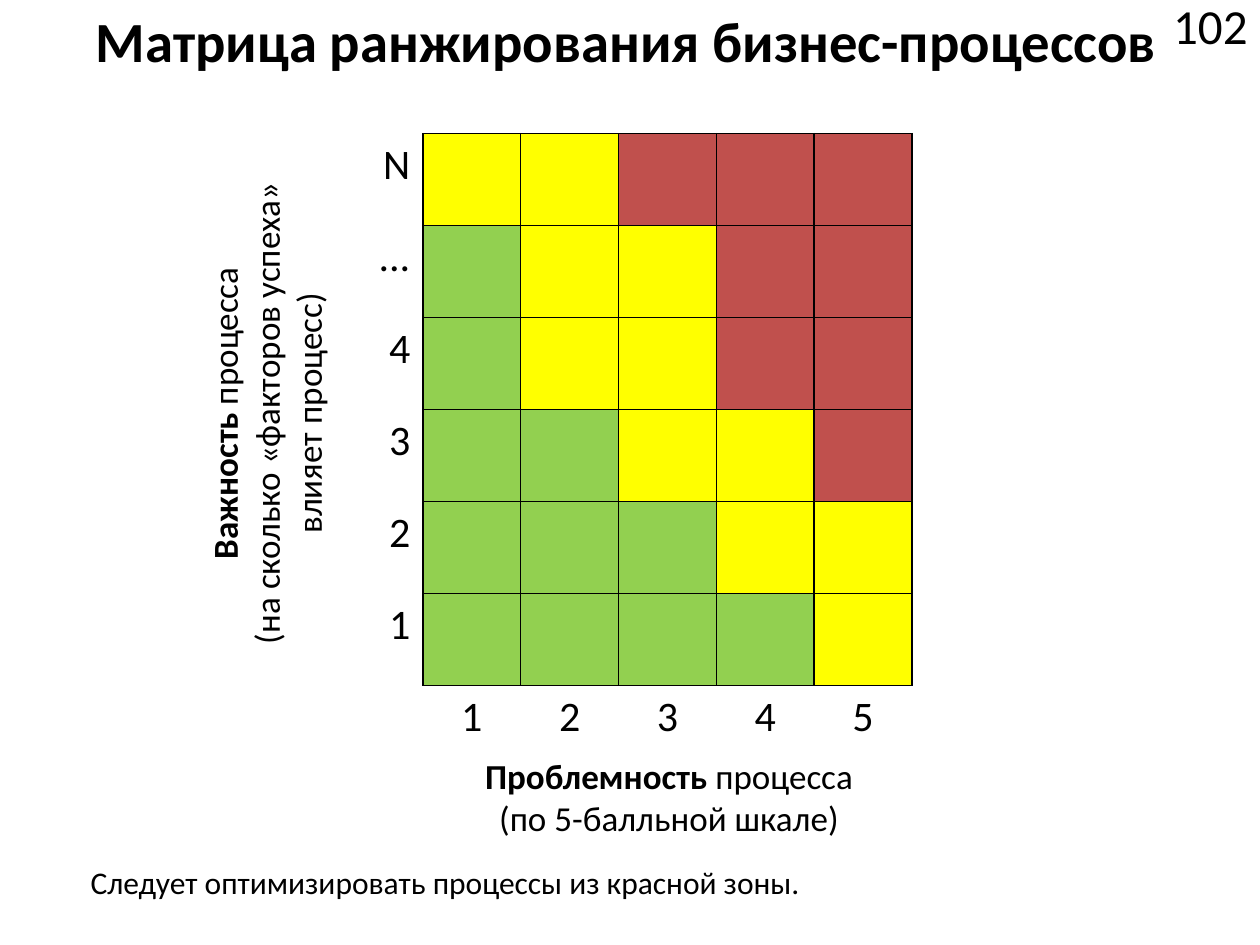
from lxml import etree
from pptx import Presentation
from pptx import util as u
from pptx.dml.color import RGBColor
from pptx.enum import text
from pptx.oxml.ns import qn

COLORS = {"ink": "000000", "Y": "FFFF00", "R": "C0504D", "G": "92D050"}
NO_STYLE = "{2D5ABB26-0587-4C30-8999-92F81FD0307C}"
LEFT, CENTER, RIGHT = (text.PP_ALIGN.LEFT, text.PP_ALIGN.CENTER, text.PP_ALIGN.RIGHT)


class SlideBuilder:
    """Holds the style and the current slide and adds elements to it."""

    font = "Calibri"

    def __init__(self, slide):
        self.slide = slide

    def style(self, paragraph, size, align, bold=None):
        paragraph.alignment = align
        paragraph.font.name = self.font
        paragraph.font.size = u.Pt(size)
        paragraph.font.bold = bold
        paragraph.font.color.rgb = RGBColor.from_string(COLORS["ink"])

    def text_box(self, box, lines, size, align=LEFT, bold=None,
                 anchor=text.MSO_ANCHOR.TOP, vertical=False):
        shape = self.slide.shapes.add_textbox(*(u.Inches(value) for value in box))
        frame = shape.text_frame
        frame.word_wrap = True
        frame.vertical_anchor = anchor
        if vertical:
            frame._txBody.bodyPr.set("vert", "vert270")
        for index, line in enumerate(lines):
            paragraph = frame.add_paragraph() if index else frame.paragraphs[0]
            paragraph.text = line
            self.style(paragraph, size, align, bold)
        return frame

    def axis_title(self, box, name, note, vertical=False):
        frame = self.text_box(box, ["", note], 20, CENTER, vertical=vertical)
        heading = frame.paragraphs[0]
        for words, bold in ((name, True), (" процесса", False)):
            run = heading.add_run()
            run.text = words
            run.font.bold = bold

    def border(self, cell, sides):
        properties = cell._tc.get_or_add_tcPr()
        for side in "LRTB":
            line = etree.SubElement(properties, qn(f"a:ln{side}"), w=str(u.Pt(1)))
            if side in sides:
                fill = etree.SubElement(line, qn("a:solidFill"))
                etree.SubElement(fill, qn("a:srgbClr"), val=COLORS["ink"])
            else:
                etree.SubElement(line, qn("a:noFill"))

    def cell(self, cell, label="", align=LEFT, sides="", color=None):
        cell.text = label
        self.style(cell.text_frame.paragraphs[0], 24, align)
        self.border(cell, sides)
        if color:
            cell.fill.solid()
            cell.fill.fore_color.rgb = RGBColor.from_string(COLORS[color])
        else:
            cell.fill.background()

    def matrix(self, box, row_labels, zones, column_labels, row_height, label_height):
        rows, columns = len(zones) + 1, len(column_labels) + 1
        frame = self.slide.shapes.add_table(rows, columns, *(u.Inches(v) for v in box))
        table = frame.table
        table.first_row = table.horz_banding = False
        table._tbl.tblPr.find(qn("a:tableStyleId")).text = NO_STYLE
        for row in table.rows:
            row.height = u.Inches(row_height)
        table.rows[rows - 1].height = u.Inches(label_height)
        for r, (label, zone) in enumerate(zip(row_labels, zones)):
            self.cell(table.cell(r, 0), label, RIGHT, "R")
            for c, color in enumerate(zone, 1):
                self.cell(table.cell(r, c), sides="LRTB", color=color)
        self.cell(table.cell(rows - 1, 0))
        for c, label in enumerate(column_labels, 1):
            self.cell(table.cell(rows - 1, c), label, CENTER, "T")


def main():
    presentation = Presentation()
    presentation.slide_width, presentation.slide_height = u.Inches(10), u.Inches(7.5)
    builder = SlideBuilder(presentation.slides.add_slide(presentation.slide_layouts[6]))
    builder.text_box((0.47, 0, 9, 0.94), ["Матрица ранжирования бизнес-процессов"],
                     32.4, CENTER, bold=True)
    builder.text_box((8.98, 0, 1.02, 0.39), ["102"], 28, RIGHT,
                     anchor=text.MSO_ANCHOR.MIDDLE)
    builder.matrix((2.58, 1.06, 4.66, 4.88), ["N", "...", "4", "3", "2", "1"],
                   ["YYRRR", "GYYRR", "GYYRR", "GGYYR", "GGGYY", "GGGGY"],
                   "12345", 0.73, 0.39)
    builder.axis_title((3.28, 5.94, 4.06, 0.77), "Проблемность", "(по 5-балльной шкале)")
    builder.axis_title((1.56, 1.09, 1.21, 4.38), "Важность",
                       "(на сколько «факторов успеха» влияет процесс)", vertical=True)
    builder.text_box((0.62, 6.8, 8.75, 0.4),
                     ["Следует оптимизировать процессы из красной зоны."], 18)
    presentation.save("out.pptx")


if __name__ == "__main__":
    main()
